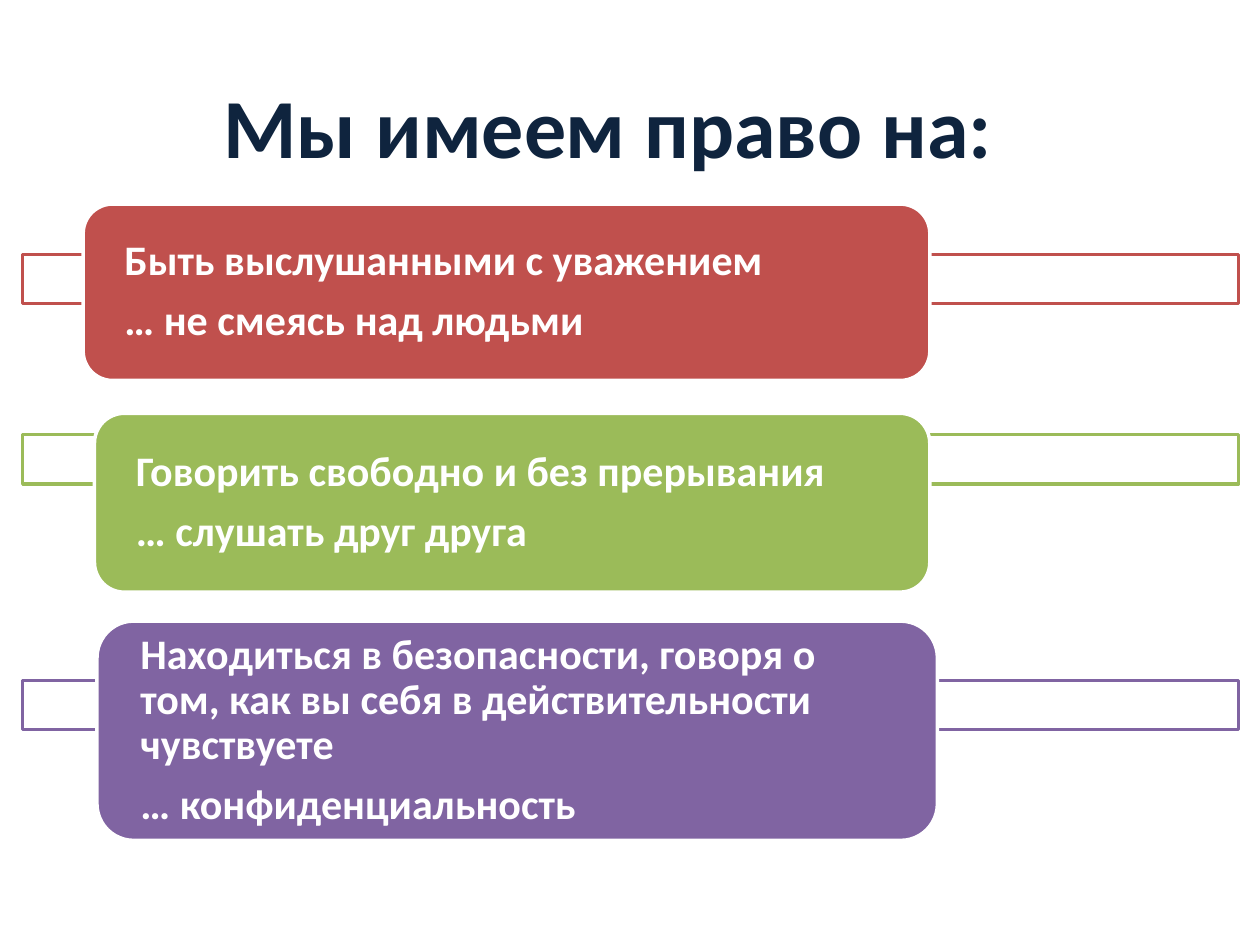
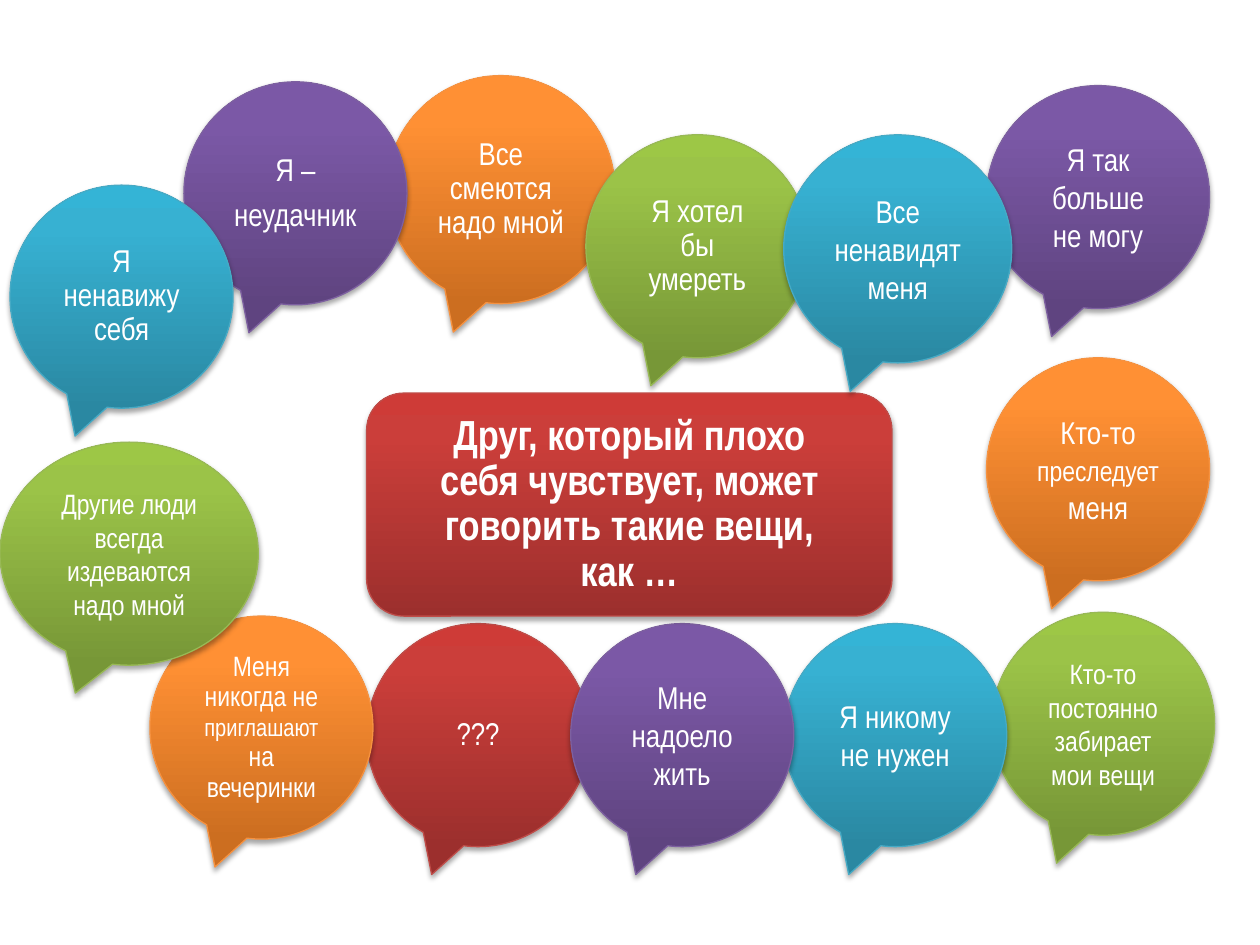
from lxml.etree import SubElement
from pptx import Presentation
from pptx.dml.color import RGBColor
from pptx.enum.shapes import MSO_SHAPE as SHAPE
from pptx.enum.text import MSO_ANCHOR as ANCHOR, PP_ALIGN as ALIGN
from pptx.oxml.ns import qn
from pptx.util import Inches, Pt

WHITE, NAVY = "FFFFFF", "0F243E"
HEAD_FONT, BUBBLE_FONT = "Calibri", "Arial Narrow"
BUBBLE = 1.77

# Gradient from bottom to top (0, 80, 100 %), then outline
THEMES = {
    "red": ("9C2F2D", "CB3E3A", "CE3B37", "BF4C48"),
    "orange": ("CC6E20", "FF9034", "FF9136", "F69240"),
    "purple": ("5F4480", "7B58A6", "7C57A8", "7D60A0"),
    "green": ("779737", "9BC348", "9DC746", "98B955"),
    "blue": ("2A88A2", "37B1D2", "34B4D6", "46AAC5"),
}

# Card box, top of the bar behind it, colour, paragraphs
RIGHTS = [
    ((0.66, 1.62, 6.72, 1.4), 2.02, "C0504D",
     ["Быть выслушанными с уважением", "… не смеясь над людьми"]),
    ((0.75, 3.28, 6.63, 1.42), 3.45, "9BBB59",
     ["Говорить свободно и без прерывания", "… слушать друг друга"]),
    ((0.77, 4.93, 6.67, 1.74), 5.4, "8064A2",
     ["Находиться в безопасности, говоря о том, как вы себя в действительности чувствуете",
      "… конфиденциальность"]),
]

# Left, top, width, height, theme, paragraphs of (text, size) runs, line spacing
BACK_BUBBLES = [
    (2.91, 4.95, BUBBLE, BUBBLE, "red", [[("???", 18)]], 0.9),
    (3.07, 0.6, 1.81, 1.81, "orange", [[("Все смеются надо мной", 18)]], 0.9),
    (1.46, 0.65, BUBBLE, BUBBLE, "purple", [[("Я –", 18)], [("неудачник", 18)]], 0.9),
    (7.83, 0.68, BUBBLE, BUBBLE, "purple", [[("Я так больше не могу", 18)]], 1),
    (7.83, 2.84, BUBBLE, BUBBLE, "orange",
     [[("Кто-то ", 18), ("преследует", 16), (" меня", 18)]], 1),
    (7.87, 4.86, BUBBLE, BUBBLE, "green", [[("Кто-то постоянно забирает мои вещи", 16)]], 1),
    (6.22, 4.95, BUBBLE, BUBBLE, "blue", [[("Я никому не нужен", 18)]], 1),
    (4.53, 4.95, BUBBLE, BUBBLE, "purple", [[("Мне надоело жить", 18)]], 1),
    (1.19, 4.89, BUBBLE, BUBBLE, "orange",
     [[("Меня никогда не ", 16), ("приглашают", 14), (" на вечеринки", 16)]], 0.9),
    (0, 3.51, 2.05, BUBBLE, "green", [[("Другие люди всегда издеваются надо мной", 16)]], 1),
    (4.65, 1.07, BUBBLE, BUBBLE, "green", [[("Я хотел бы умереть", 18)]], 0.9),
]
FRONT_BUBBLES = [
    (0.08, 1.47, BUBBLE, BUBBLE, "blue", [[("Я ненавижу себя", 18)]], 0.9),
    (6.22, 1.07, 1.81, 1.81, "blue", [[("Все ненавидят меня", 18)]], 1),
]


def rgb(value):
    return RGBColor.from_string(value)


def set_attrs(target, values):
    for name, value in values.items():
        setattr(target, name, value)


def add_box(slide, kind, box, line, weight, fill=None):
    sp = slide.shapes.add_shape(kind, *map(Inches, box))
    sp.shadow.inherit = False
    sp.line.color.rgb = rgb(line)
    sp.line.width = Pt(weight)
    if fill:
        sp.fill.solid()
        sp.fill.fore_color.rgb = rgb(fill)
    return sp


def write(sp, paragraphs, font, margins, align, spacing=1, gap=0):
    """Fill a shape with paragraphs, each a list of (text, size) runs."""
    tf = sp.text_frame
    x, y = map(Inches, margins)
    set_attrs(tf, dict(word_wrap=True, vertical_anchor=ANCHOR.MIDDLE, margin_left=x,
                       margin_right=x, margin_top=y, margin_bottom=y))
    for i, runs in enumerate(paragraphs):
        p = tf.add_paragraph() if i else tf.paragraphs[0]
        set_attrs(p, dict(alignment=align, line_spacing=spacing, space_after=Pt(gap)))
        for text, size in runs:
            r = p.add_run()
            r.text = text
            set_attrs(r.font, dict(name=font["name"], size=Pt(size), bold=font["bold"]))
            r.font.color.rgb = rgb(font["color"])


def add_gloss(sp, stops):
    """Three-stop vertical gradient and a soft shadow below."""
    sp.fill.gradient()
    sp.fill.gradient_angle = 90
    sp_pr = sp._element.spPr
    gs_lst = sp_pr.find(".//" + qn("a:gsLst"))
    gs_lst.clear()
    for pos, color in zip((0, 80, 100), stops):
        gs = SubElement(gs_lst, qn("a:gs"), pos=str(pos * 1000))
        SubElement(gs, qn("a:srgbClr"), val=color)
    shadow = SubElement(sp_pr.find(qn("a:effectLst")), qn("a:outerShdw"),
                        blurRad=str(Pt(3.1)), dist=str(Pt(1.8)), dir="5400000", rotWithShape="0")
    color = SubElement(shadow, qn("a:srgbClr"), val="000000")
    SubElement(color, qn("a:alpha"), val="35000")


def add_title(slide, box, text):
    sp = slide.shapes.add_textbox(*map(Inches, box))
    write(sp, [[(text, 48)]], dict(name=HEAD_FONT, bold=True, color=NAVY),
          (0.1, 0.05), ALIGN.CENTER)


def add_right(slide, box, bar_top, color, texts):
    # Bar across the slide
    bar = add_box(slide, SHAPE.RECTANGLE, (0.18, bar_top, 9.65, 0.39), color, 2, WHITE)
    bar_color = bar._element.spPr.find(qn("a:solidFill")).find(qn("a:srgbClr"))
    SubElement(bar_color, qn("a:alpha"), val="90000")
    # Card on top of it
    card = add_box(slide, SHAPE.ROUNDED_RECTANGLE, box, WHITE, 2, color)
    write(card, [[(text, 24)] for text in texts],
          dict(name=HEAD_FONT, bold=True, color=WHITE), (0.26, 0), ALIGN.LEFT, 0.9, 8.4)


def add_bubble(slide, left, top, width, height, theme, paragraphs, spacing):
    *stops, line = THEMES[theme]
    sp = add_box(slide, SHAPE.OVAL_CALLOUT, (left, top, width, height), line, 0.75)
    add_gloss(sp, stops)
    write(sp, paragraphs, dict(name=BUBBLE_FONT, bold=False, color=WHITE),
          (0.12, 0.12), ALIGN.CENTER, spacing, 6.3 if len(paragraphs) > 1 else 0)


def add_center(slide, box, text):
    *stops, line = THEMES["red"]
    sp = add_box(slide, SHAPE.ROUNDED_RECTANGLE, box, line, 0.75)
    add_gloss(sp, stops)
    write(sp, [[(text, 24)]], dict(name=BUBBLE_FONT, bold=True, color=WHITE),
          (0.29, 0.14), ALIGN.CENTER, 0.9)


def rights_slide(slide):
    add_title(slide, (0, 0.68, 9.65, 0.63), "Мы имеем право на:")
    for right in RIGHTS:
        add_right(slide, *right)


def phrases_slide(slide):
    for bubble in BACK_BUBBLES:
        add_bubble(slide, *bubble)
    add_center(slide, (2.91, 3.12, 4.17, BUBBLE),
               "Друг, который плохо себя чувствует, может говорить такие вещи, как …")
    for bubble in FRONT_BUBBLES:
        add_bubble(slide, *bubble)


def main():
    prs = Presentation()
    prs.slide_width, prs.slide_height = Inches(10), Inches(7.5)
    for build in (rights_slide, phrases_slide):
        build(prs.slides.add_slide(prs.slide_layouts[6]))
    prs.save("out.pptx")


if __name__ == "__main__":
    main()
